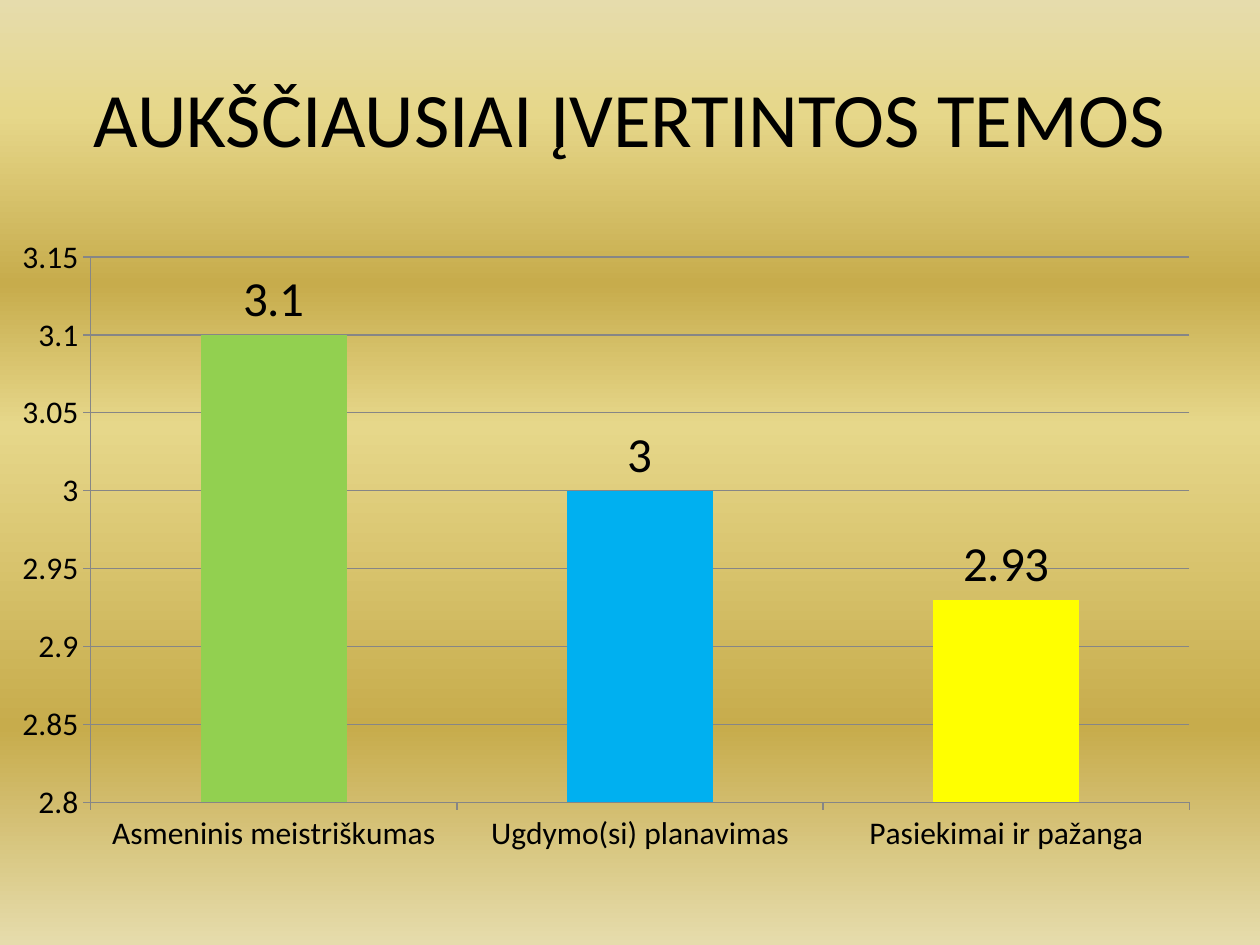
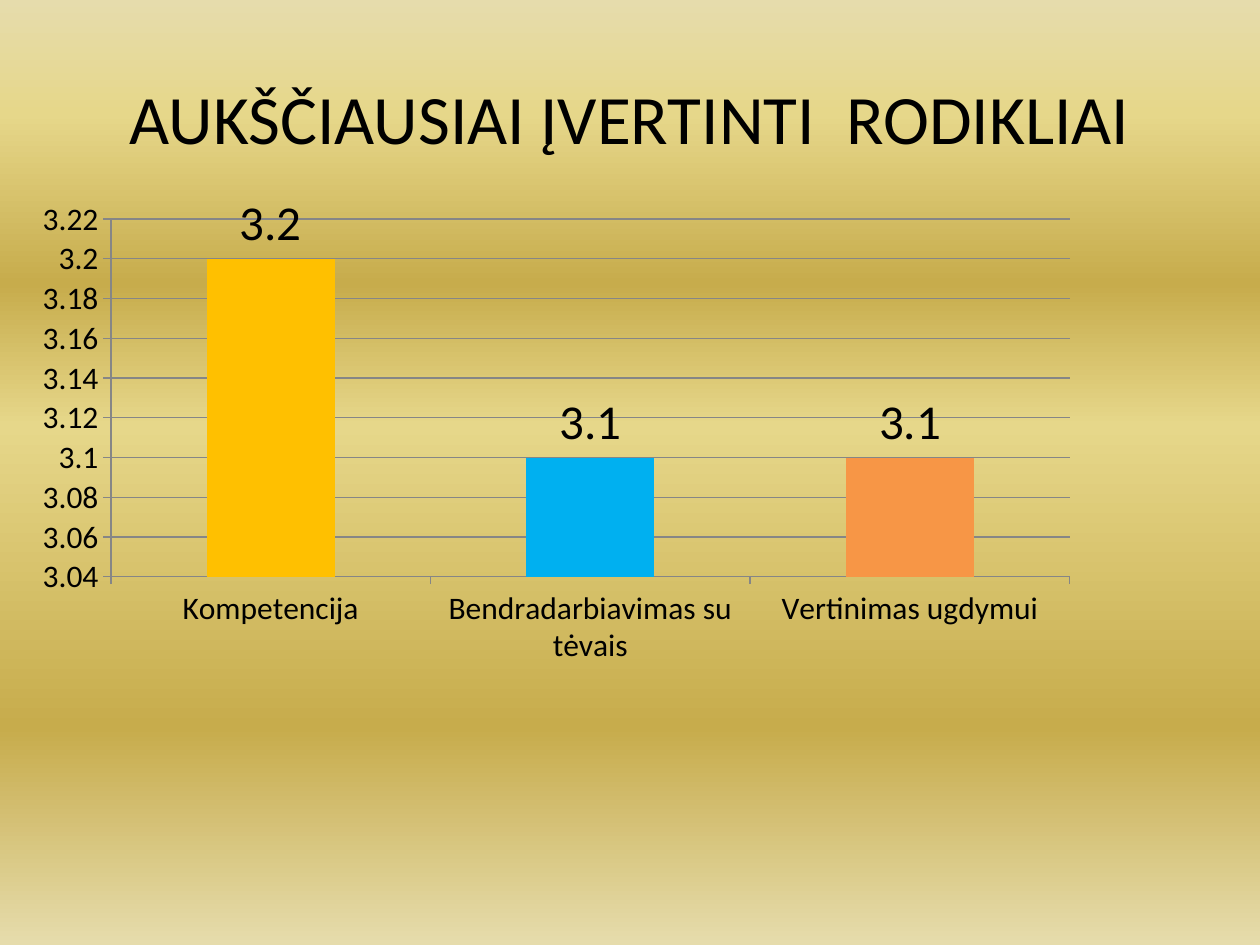
from dataclasses import dataclass

from lxml import etree
from pptx import Presentation
from pptx import util as u
from pptx.chart import data as chart_data
from pptx.dml import color as dml
from pptx.enum import chart as chart_enum
from pptx.enum import text as text_enum
from pptx.oxml import ns

FONT = "Calibri"
COLOURS = {
    "text": "000000",
    "line": "868686",
    "pale": "E6DCAC",
    "light": "E6D78A",
    "gold": "C7AC4C",
    "green": "92D050",
    "blue": "00B0F0",
    "yellow": "FFFF00",
    "amber": "FFC000",
    "orange": "F79646",
    "red": "C0504D",
    "olive": "9BBB59",
}
GRADIENT = [(0, "pale"), (12, "light"), (30, "gold"), (45, "light"), (77, "gold"), (100, "pale")]
UNFILLED_SERIES = {"Series 2": "red", "Series 3": "olive"}
TITLE_BOX = (0.5, 0.3, 9, 1.25)
AXIS_SIZE = 18
LABEL_SIZE = 28


@dataclass
class Bar:
    category: str
    value: float
    colour: str


@dataclass
class RatingSlide:
    title: str
    title_size: float
    box: tuple[float, float, float, float]
    plot: tuple[float, float, float, float]
    scale: dict[str, float]
    bars: list[Bar]


SLIDES = [
    RatingSlide(
        "AUKŠČIAUSIAI ĮVERTINTOS TEMOS", 44,
        (0, 1.23, 9.5, 6.06), (0.72, 0.81, 8.72, 4.33),
        {"minimum_scale": 2.8, "maximum_scale": 3.15, "major_unit": 0.05},
        [Bar("Asmeninis meistriškumas", 3.1, "green"),
         Bar("Ugdymo(si) planavimas", 3, "blue"),
         Bar("Pasiekimai ir pažanga", 2.93, "yellow")],
    ),
    RatingSlide(
        "AUKŠČIAUSIAI ĮVERTINTI  RODIKLIAI", 39.6,
        (0.24, 1.55, 9.1, 5.47), (0.64, 0.15, 7.61, 2.86),
        {"minimum_scale": 3.04, "maximum_scale": 3.22, "major_unit": 0.02},
        [Bar("Kompetencija", 3.2, "amber"),
         Bar("Bendradarbiavimas su tėvais", 3.1, "blue"),
         Bar("Vertinimas ugdymui", 3.1, "orange")],
    ),
]


def rgb(name: str) -> dml.RGBColor:
    return dml.RGBColor.from_string(COLOURS[name])


def apply(target, values: dict) -> None:
    for name, value in values.items():
        setattr(target, name, value)


def format_font(font, size: float) -> None:
    apply(font, {"name": FONT, "size": u.Pt(size), "bold": False})
    font.color.rgb = rgb("text")


def format_line(line) -> None:
    line.color.rgb = rgb("line")
    line.width = u.Pt(0.75)


def format_fill(fill, colour: str) -> None:
    fill.solid()
    fill.fore_color.rgb = rgb(colour)


def paint_background(master) -> None:
    fill = master.background.fill
    fill.gradient()
    fill.gradient_angle = 270
    stops = next(master.element.iter(ns.qn("a:gsLst")))
    for stop in list(stops):
        stops.remove(stop)
    for percent, name in GRADIENT:
        stop = etree.SubElement(stops, ns.qn("a:gs"), pos=str(percent * 1000))
        etree.SubElement(stop, ns.qn("a:srgbClr"), val=COLOURS[name])


def add_title(slide, item: RatingSlide) -> None:
    title = slide.shapes.title
    apply(title, dict(zip(("left", "top", "width", "height"), map(u.Inches, TITLE_BOX))))
    frame = title.text_frame
    frame.text = item.title
    apply(frame, {"word_wrap": True, "vertical_anchor": text_enum.MSO_ANCHOR.MIDDLE})
    paragraph = frame.paragraphs[0]
    paragraph.alignment = text_enum.PP_ALIGN.CENTER
    format_font(paragraph.runs[0].font, item.title_size)


def place_plot(chart, item: RatingSlide) -> None:
    area = next(chart.element.iter(ns.qn("c:plotArea")))
    for old in area.findall(ns.qn("c:layout")):
        area.remove(old)
    layout = etree.Element(ns.qn("c:layout"))
    manual = etree.SubElement(layout, ns.qn("c:manualLayout"))
    settings = {"layoutTarget": "inner", "xMode": "edge", "yMode": "edge"}
    chart_size = item.box[2:] * 2
    for name, length, whole in zip("xywh", item.plot, chart_size):
        settings[name] = str(length / whole)
    for name, value in settings.items():
        etree.SubElement(manual, ns.qn(f"c:{name}"), val=value)
    area.insert(0, layout)


def add_rating_chart(slide, item: RatingSlide) -> None:
    data = chart_data.CategoryChartData()
    data.categories = [bar.category for bar in item.bars]
    data.add_series("Series 1", [bar.value for bar in item.bars])
    for name in UNFILLED_SERIES:
        data.add_series(name, [])
    chart = slide.shapes.add_chart(
        chart_enum.XL_CHART_TYPE.COLUMN_CLUSTERED, *map(u.Inches, item.box), data
    ).chart
    apply(chart, {"has_legend": False, "has_title": False})
    format_font(chart.font, AXIS_SIZE)

    for axis in (chart.category_axis, chart.value_axis):
        axis.major_tick_mark = chart_enum.XL_TICK_MARK.OUTSIDE
        format_line(axis.format.line)
    apply(chart.value_axis, {**item.scale, "has_major_gridlines": True})
    format_line(chart.value_axis.major_gridlines.format.line)

    plot = chart.plots[0]
    apply(plot, {"gap_width": 150, "vary_by_categories": False})
    ratings, *unfilled = plot.series
    labels = ratings.data_labels
    apply(labels, {"show_value": True, "position": chart_enum.XL_LABEL_POSITION.OUTSIDE_END})
    format_font(labels.font, LABEL_SIZE)
    for index, bar in enumerate(item.bars):
        format_fill(ratings.points[index].format.fill, bar.colour)
    for series in unfilled:
        format_fill(series.format.fill, UNFILLED_SERIES[series.name])
    place_plot(chart, item)


def main() -> None:
    presentation = Presentation()
    apply(presentation, {"slide_width": u.Inches(10), "slide_height": u.Inches(7.5)})
    paint_background(presentation.slide_master)
    title_only = presentation.slide_layouts.get_by_name("Title Only")
    for item in SLIDES:
        slide = presentation.slides.add_slide(title_only)
        add_title(slide, item)
        add_rating_chart(slide, item)
    presentation.save("out.pptx")


if __name__ == "__main__":
    main()
